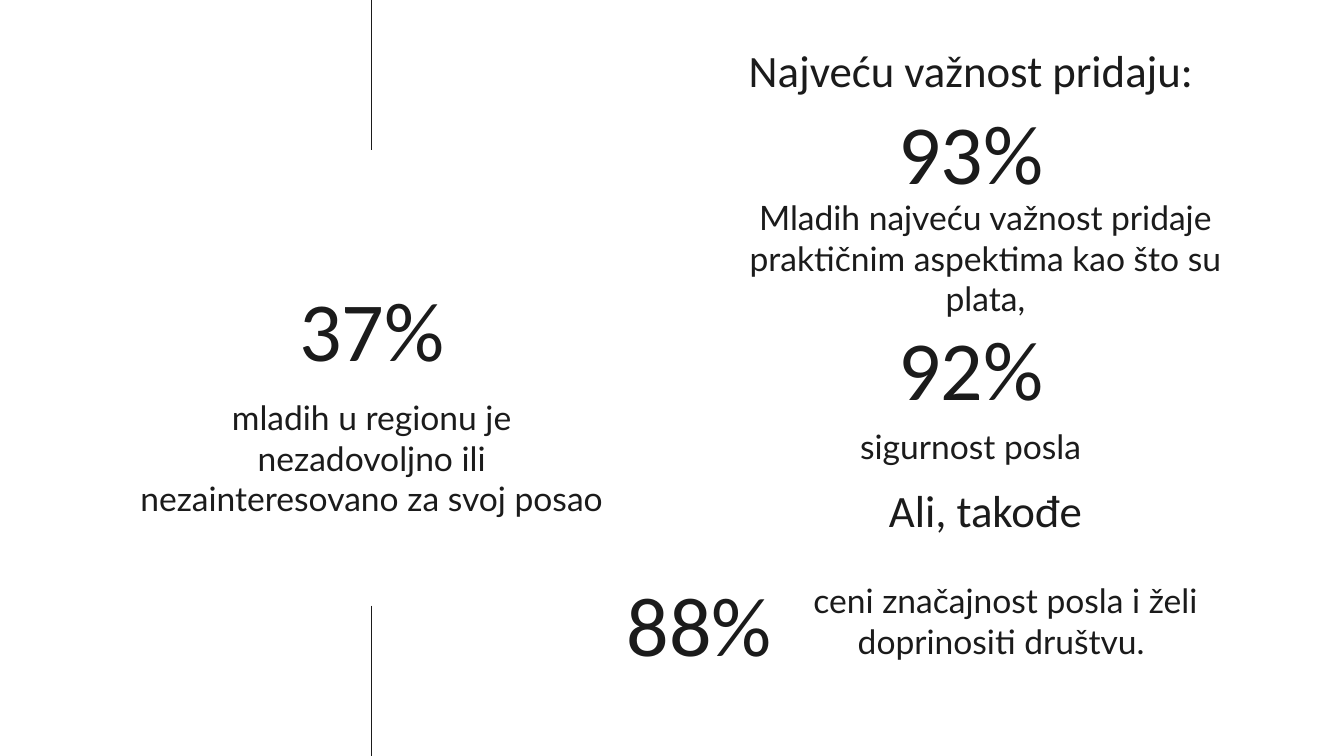
"""Build a slide with survey percentages on young people's views of work."""
from lxml import etree
from pptx import Presentation
from pptx.dml.color import RGBColor
from pptx.enum.shapes import MSO_CONNECTOR
from pptx.enum.text import MSO_ANCHOR, PP_ALIGN
from pptx.oxml.ns import qn
from pptx.util import Cm, Pt

STRAIGHT = MSO_CONNECTOR.STRAIGHT
TOP, BOTTOM = MSO_ANCHOR.TOP, MSO_ANCHOR.BOTTOM
CENTER = PP_ALIGN.CENTER
INK = "1B1B1B"
SLIDE_WIDTH, SLIDE_HEIGHT = 25.4, 14.29
BOX_WIDTH, HEADING_WIDTH = 9.47, 15.06
LEFT_COLUMN, RIGHT_COLUMN = 2.29, 13.61
RIGHT_INDENTED = 13.89
LINE_LENGTH = 2.84

STYLES = {
    "number": ("Calibri", 45, BOTTOM, 2.08),
    "heading": ("Calibri", 24, BOTTOM, 2.08),
    "caption": ("Lato", 18, TOP, 1.9),
}
TEXTS = [
    ("number", LEFT_COLUMN, 5.33, BOX_WIDTH, "37%"),
    ("caption", LEFT_COLUMN, 7.26, BOX_WIDTH,
     "mladih u regionu je nezadovoljno ili nezainteresovano za svoj posao"),
    ("number", RIGHT_COLUMN, 1.98, BOX_WIDTH, "93%"),
    ("caption", RIGHT_INDENTED, 3.48, BOX_WIDTH,
     "Mladih najveću važnost pridaje praktičnim aspektima kao što su plata,"),
    ("number", RIGHT_COLUMN, 6.05, BOX_WIDTH, "92%"),
    ("caption", RIGHT_COLUMN, 7.8, BOX_WIDTH, "sigurnost posla"),
    ("heading", 10.82, 0, HEADING_WIDTH, "Najveću važnost pridaju:"),
    ("heading", RIGHT_INDENTED, 8.31, BOX_WIDTH, "Ali, takođe"),
    ("number", 8.48, 10.9, BOX_WIDTH, "88%"),
    ("caption", 14.27, 10.72, BOX_WIDTH,
     "ceni značajnost posla i želi doprinositi društvu. "),
]


def color(value):
    return RGBColor.from_string(value)


presentation = Presentation()
presentation.slide_width = Cm(SLIDE_WIDTH)
presentation.slide_height = Cm(SLIDE_HEIGHT)
slide = presentation.slides.add_slide(presentation.slide_layouts[6])

for style, left, top, width, text in TEXTS:
    font_name, size, anchor, height = STYLES[style]
    shape = slide.shapes.add_textbox(Cm(left), Cm(top), Cm(width), Cm(height))
    frame = shape.text_frame
    frame.word_wrap = True
    frame.vertical_anchor = anchor
    frame.margin_left = frame.margin_right = Cm(0.25)
    frame.margin_top = frame.margin_bottom = Cm(0.25)
    paragraph = frame.paragraphs[0]
    paragraph.alignment = CENTER
    run = paragraph.add_run()
    run.text = text
    run.font.name = font_name
    run.font.size = Pt(size)
    run.font.color.rgb = color(INK)

line_x = Cm(LEFT_COLUMN + BOX_WIDTH / 2)
for line_top in (0, SLIDE_HEIGHT - LINE_LENGTH):
    line = slide.shapes.add_connector(
        STRAIGHT, line_x, Cm(line_top), line_x, Cm(line_top + LINE_LENGTH))
    line.line.color.rgb = color(INK)
    line.line.width = Pt(0.75)
    etree.SubElement(line._element.spPr, qn("a:effectLst"))

presentation.save("out.pptx")
